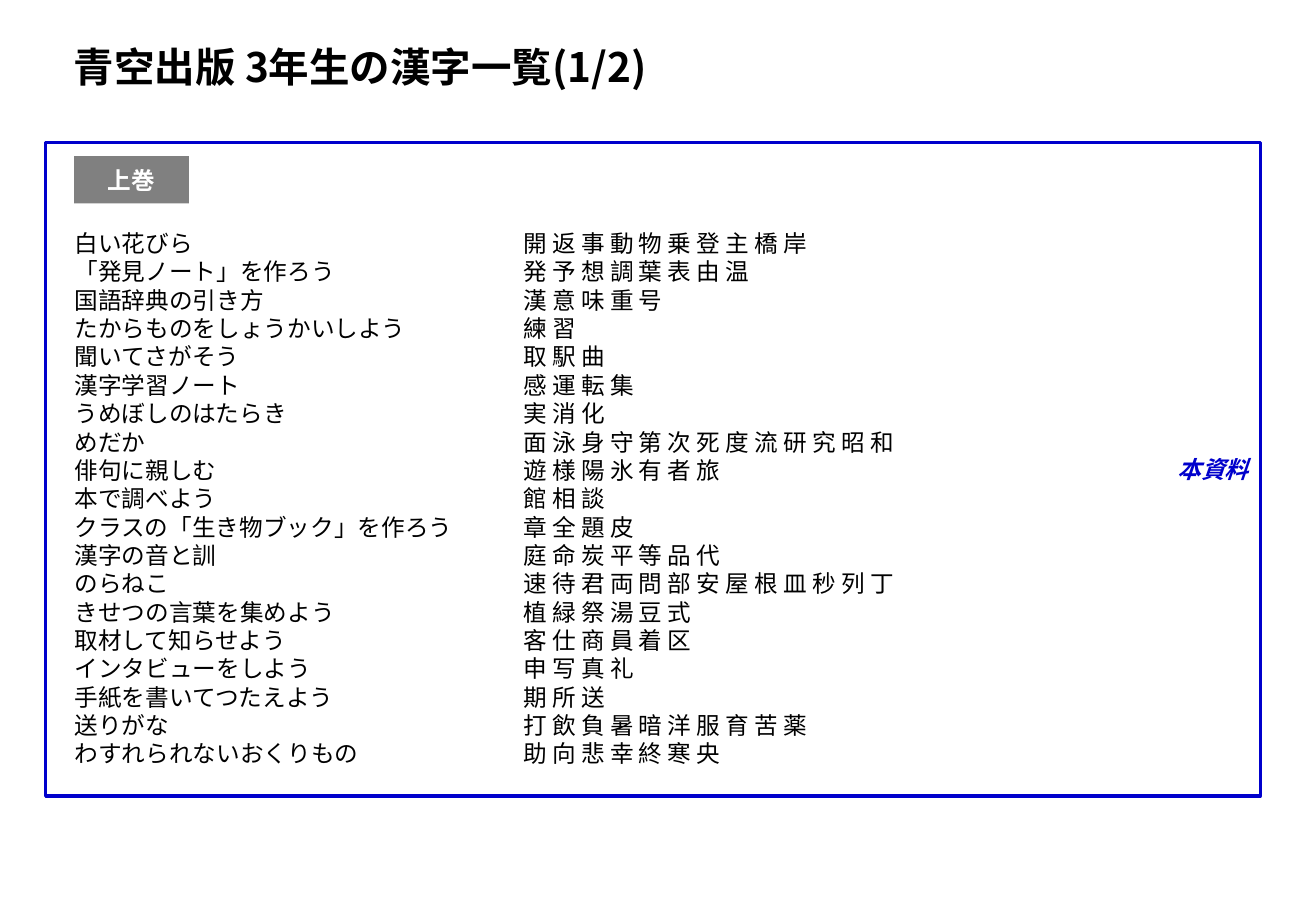
from lxml.etree import SubElement
from pptx import Presentation
from pptx.dml.color import RGBColor
from pptx.enum.shapes import MSO_SHAPE as Shape
from pptx.enum.text import MSO_ANCHOR as Anchor, MSO_AUTO_SIZE as AutoSize, PP_ALIGN as Align
from pptx.oxml.ns import qn
from pptx.util import Pt

FONT = "Noto Sans CJK JP"
COLORS = {"text": "000000", "badge": "808080", "badge_text": "FFFFFF", "frame": "0000CC"}
LESSON_WIDTH = 266
LESSONS = [
    ("白い花びら", "開返事動物乗登主橋岸"),
    ("「発見ノート」を作ろう", "発予想調葉表由温"),
    ("国語辞典の引き方", "漢意味重号"),
    ("たからものをしょうかいしよう", "練習"),
    ("聞いてさがそう", "取駅曲"),
    ("漢字学習ノート", "感運転集"),
    ("うめぼしのはたらき", "実消化"),
    ("めだか", "面泳身守第次死度流研究昭和"),
    ("俳句に親しむ", "遊様陽氷有者旅"),
    ("本で調べよう", "館相談"),
    ("クラスの「生き物ブック」を作ろう", "章全題皮"),
    ("漢字の音と訓", "庭命炭平等品代"),
    ("のらねこ", "速待君両問部安屋根皿秒列丁"),
    ("きせつの言葉を集めよう", "植緑祭湯豆式"),
    ("取材して知らせよう", "客仕商員着区"),
    ("インタビューをしよう", "申写真礼"),
    ("手紙を書いてつたえよう", "期所送"),
    ("送りがな", "打飲負暑暗洋服育苦薬"),
    ("わすれられないおくりもの", "助向悲幸終寒央"),
]


def rgb(name):
    return RGBColor.from_string(COLORS[name])


def place(part, box):
    part.left, part.top, part.width, part.height = map(Pt, box)


def write(part, text, size=14, color="text", bold=False, italic=False,
          align=Align.LEFT, anchor=Anchor.TOP, spacing=None, plain_list=False):
    frame = part.text_frame
    frame.word_wrap = True
    frame.auto_size = AutoSize.NONE
    frame.vertical_anchor = anchor
    for index, line in enumerate(text.split("\n")):
        paragraph = frame.add_paragraph() if index else frame.paragraphs[0]
        paragraph.alignment = align
        paragraph.space_before = paragraph.space_after = Pt(0)
        if spacing:
            paragraph.line_spacing = Pt(spacing)
        if plain_list:
            layout = paragraph._p.get_or_add_pPr()
            layout.set("marL", "0")
            layout.set("indent", "0")
            SubElement(layout, qn("a:buNone"))
        run = paragraph.add_run()
        run.text = line
        font = run.font
        font.size, font.bold, font.italic = Pt(size), bold, italic
        font.color.rgb = rgb(color)
        font.name = FONT
        SubElement(run._r.get_or_add_rPr(), qn("a:ea"), typeface=FONT)


def add_box(slide, box, fill=None, line=None):
    panel = slide.shapes.add_shape(Shape.RECTANGLE, *map(Pt, box))
    panel.shadow.inherit = False
    if fill:
        panel.fill.solid()
        panel.fill.fore_color.rgb = rgb(fill)
    else:
        panel.fill.background()
    if line:
        panel.line.color.rgb = rgb(line)
        panel.line.width = Pt(2)
    else:
        panel.line.fill.background()
    return panel


def add_heading(slide, box):
    heading = slide.shapes.title
    place(heading, box)
    write(heading, "青空出版 3年生の漢字一覧(1/2)", size=24, bold=True, spacing=30)


def add_lessons(slide, box):
    left, top, width, height = box
    lesson_list, kanji_list = slide.placeholders[1], slide.placeholders[2]
    place(lesson_list, (left, top, LESSON_WIDTH, height))
    place(kanji_list, (left + LESSON_WIDTH, top, width - LESSON_WIDTH, height))
    lessons = "\n".join(lesson for lesson, _ in LESSONS)
    kanji_rows = "\n".join(" ".join(kanji) for _, kanji in LESSONS)
    for column, rows in ((lesson_list, lessons), (kanji_list, kanji_rows)):
        write(column, rows, spacing=16.82, plain_list=True)


def add_volume(slide, box):
    left, top, width, height = box
    add_lessons(slide, (left + 9.8, top + 47.7, width - 31.6, height - 57.4))

    badge = add_box(slide, (left + 16.9, top + 8.2, 68, 28), fill="badge")
    write(badge, "上巻", color="badge_text", bold=True, align=Align.CENTER, anchor=Anchor.MIDDLE)

    volume_frame = add_box(slide, box, line="frame")
    write(volume_frame, "本資料", color="frame", bold=True, italic=True,
          align=Align.RIGHT, anchor=Anchor.MIDDLE)


def main():
    deck = Presentation()
    deck.slide_width, deck.slide_height = Pt(780), Pt(540)
    slide = deck.slides.add_slide(deck.slide_layouts[3])
    add_heading(slide, (36.6, 19.8, 697.6, 36.8))
    add_volume(slide, (27.1, 84.4, 720, 387.4))
    deck.save("out.pptx")


if __name__ == "__main__":
    main()
